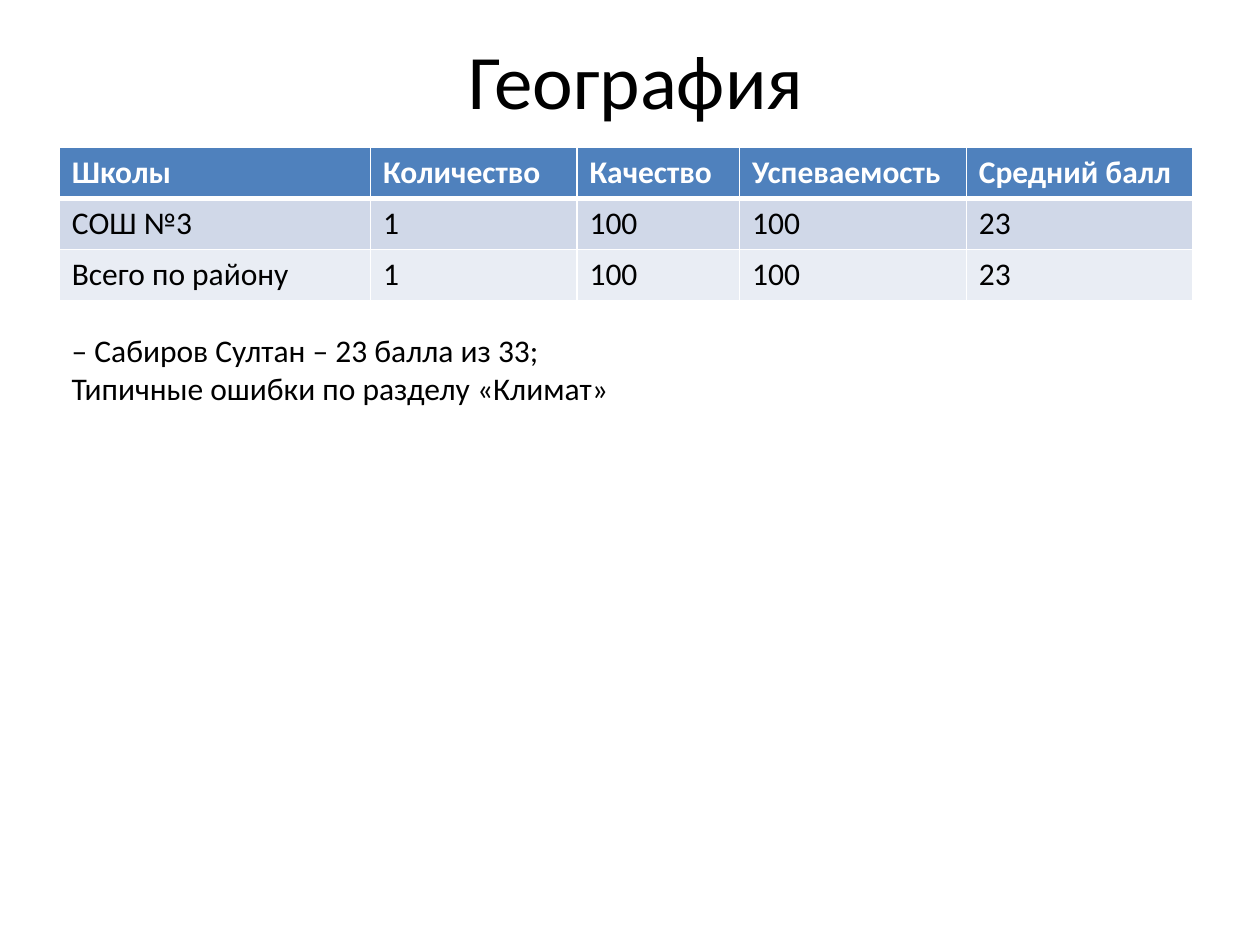
from lxml.etree import SubElement
from pptx import Presentation
from pptx.dml.color import RGBColor
from pptx.enum.text import MSO_ANCHOR, MSO_AUTO_SIZE, PP_ALIGN
from pptx.oxml.ns import qn
from pptx.util import Inches, Pt

WIDTH, HEIGHT = Inches(10), Inches(7.5)
FONT = "Calibri"
WHITE, BLACK = "FFFFFF", "000000"
ROW_FILLS = ["4F81BD", "D0D8E8", "E9EDF4"]
COLUMNS = [2.47, 1.64, 1.29, 1.8, 1.8]
RESULTS = [
    ["Школы", "Количество", "Качество", "Успеваемость", "Средний балл"],
    ["СОШ №3", "1", "100", "100", "23"],
    ["Всего по району", "1", "100", "100", "23"],
]
NOTES = ["– Сабиров Султан – 23 балла из 33;", "Типичные ошибки по разделу «Климат»"]


def color(value):
    return RGBColor.from_string(value)


def box(left, top, width, height):
    return [int(WIDTH * left), int(HEIGHT * top), int(WIDTH * width), int(HEIGHT * height)]


def format_text(tf, size, fill=BLACK, bold=False):
    for p in tf.paragraphs:
        for r in p.runs:
            r.font.name = FONT
            r.font.size = Pt(size)
            r.font.bold = bold
            r.font.color.rgb = color(fill)


def set_borders(cell, widths):
    tc_pr = cell._tc.get_or_add_tcPr()
    for side, width in widths.items():
        ln = SubElement(tc_pr, qn(f"a:ln{side}"), w=str(Pt(width)))
        fill = SubElement(ln, qn("a:solidFill"))
        SubElement(fill, qn("a:srgbClr"), val=WHITE)


def place_title(s, area, text):
    sp = s.shapes.title
    sp.left, sp.top, sp.width, sp.height = area
    tf = sp.text_frame
    tf.text = text
    tf.vertical_anchor = MSO_ANCHOR.MIDDLE
    tf.paragraphs[0].alignment = PP_ALIGN.CENTER
    format_text(tf, 44)


def place_table(s, area, rows):
    table = s.shapes.add_table(len(rows), len(COLUMNS), *area).table
    for column, share in zip(table.columns, COLUMNS):
        column.width = int(area[2] * share / sum(COLUMNS))
    for i, (values, fill) in enumerate(zip(rows, ROW_FILLS)):
        header = i == 0
        for j, value in enumerate(values):
            cell = table.cell(i, j)
            cell.text = value
            format_text(cell.text_frame, 18, WHITE if header else BLACK, header)
            set_borders(cell, {"L": 1, "R": 1, "T": 3 if i == 1 else 1, "B": 3 if header else 1})
            cell.fill.solid()
            cell.fill.fore_color.rgb = color(fill)


def place_notes(s, area, lines):
    tf = s.shapes.add_textbox(*area).text_frame
    tf.word_wrap = False
    tf.auto_size = MSO_AUTO_SIZE.SHAPE_TO_FIT_TEXT
    tf.text = "\n".join(lines)
    format_text(tf, 18)


def main():
    prs = Presentation()
    prs.slide_width, prs.slide_height = WIDTH, HEIGHT
    s = prs.slides.add_slide(prs.slide_layouts[5])
    place_title(s, box(0.055, 0, 0.9, 1 / 6), "География")
    place_table(s, box(0.047, 0.156, 0.9, 0.162), RESULTS)
    place_notes(s, box(0.047, 0.344, 0.451, 0.094), NOTES)
    prs.save("out.pptx")


if __name__ == "__main__":
    main()
